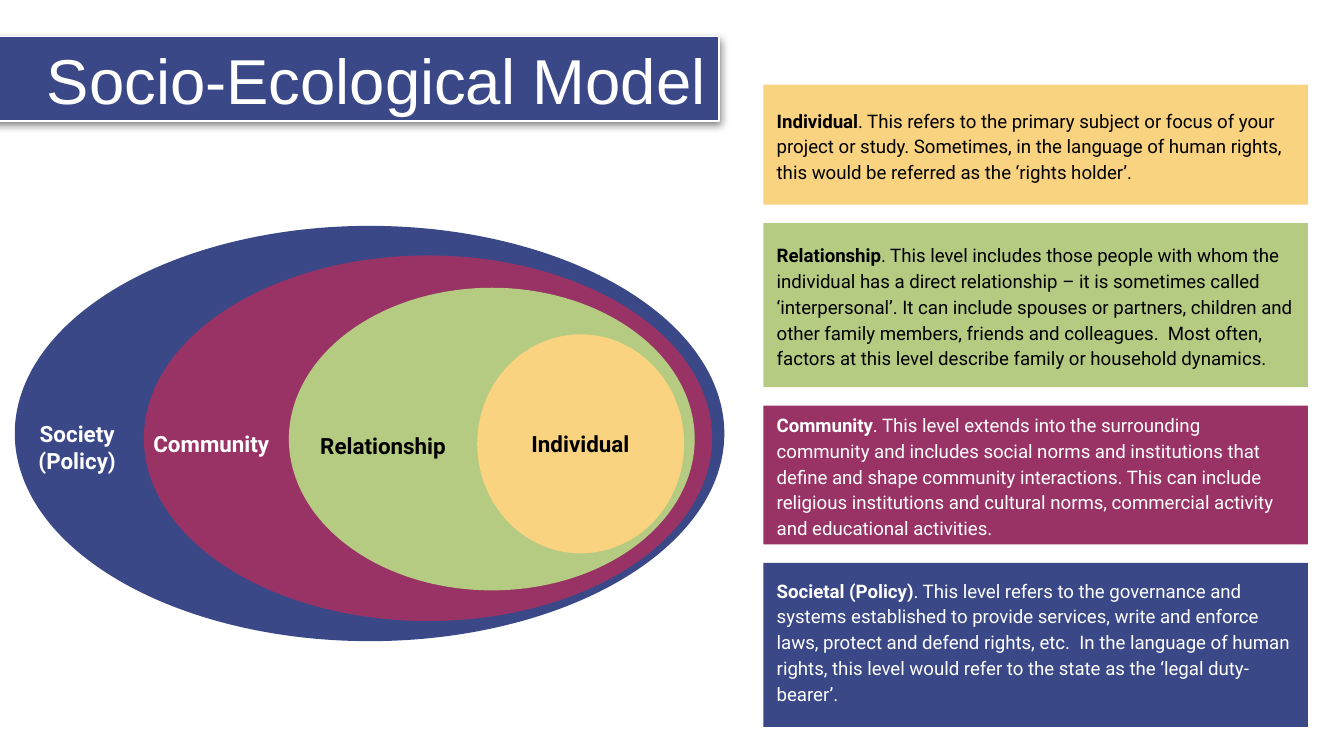
from lxml import etree
from pptx import Presentation
from pptx.dml.color import RGBColor
from pptx.enum.shapes import MSO_SHAPE as Preset
from pptx.enum.text import MSO_ANCHOR as Anchor, MSO_AUTO_SIZE as AutoSize, PP_ALIGN as Align
from pptx.oxml.ns import nsdecls
from pptx.util import Cm, Pt

NAVY = RGBColor(0x3A, 0x48, 0x88)
PLUM = RGBColor(0x99, 0x33, 0x65)
GREEN = RGBColor(0xB5, 0xCB, 0x82)
SAND = RGBColor(0xF9, 0xD3, 0x80)
WHITE = RGBColor(0xFF, 0xFF, 0xFF)
BLACK = RGBColor(0x00, 0x00, 0x00)

CARD_LEFT, CARD_TOP, CARD_WIDTH, CARD_GAP = 14.43, 1.6, 10.29, 0.35

# Level name, ellipse box, ellipse colour, label box, label colour
LEVELS = [
    ("Society (Policy)", (0.28, 4.27, 13.41, 7.85), NAVY, (0, 7.67, 2.92, 1.55), WHITE),
    ("Community", (2.72, 4.83, 10.74, 6.91), PLUM, (1.91, 7.77, 4.17, 1.22), WHITE),
    ("Relationship", (5.46, 5.44, 7.67, 5.72), GREEN, (5.36, 7.77, 3.76, 1.3), BLACK),
    ("Individual", (9.02, 6.32, 3.91, 4.14), SAND, (9.37, 7.54, 3.2, 1.7), BLACK),
]

# Term, definition, height, fill, text colour, space around the paragraph, anchor
CARDS = [
    ("Individual",
     ". This refers to the primary subject or focus of your project or study. "
     "Sometimes, in the language of human rights, this would be referred as the "
     "‘rights holder’.",
     2.27, SAND, BLACK, 12, Anchor.MIDDLE),
    ("Relationship",
     ". This level includes those people with whom the individual has a direct "
     "relationship – it is sometimes called ‘interpersonal’. It can include spouses "
     "or partners, children and other family members, friends and colleagues.  Most "
     "often, factors at this level describe family or household dynamics.",
     3.1, GREEN, BLACK, 0, Anchor.MIDDLE),
    ("Community",
     ". This level extends into the surrounding community and includes social norms "
     "and institutions that define and shape community interactions. This can include "
     "religious institutions and cultural norms, commercial activity and educational "
     "activities.",
     2.62, PLUM, WHITE, 12, Anchor.MIDDLE),
    ("Societal (Policy)",
     ". This level refers to the governance and systems established to provide "
     "services, write and enforce laws, protect and defend rights, etc.  In the "
     "language of human rights, this level would refer to the state as the ‘legal "
     "duty-bearer’.",
     3.1, NAVY, WHITE, 0, Anchor.TOP),
]


def set_frame(frame, anchor=Anchor.MIDDLE):
    frame.word_wrap = True
    frame.auto_size = AutoSize.NONE
    frame.vertical_anchor = anchor
    frame.margin_left = frame.margin_right = Cm(0.25)
    frame.margin_top = frame.margin_bottom = Cm(0.25)


def set_font(font, name, size, color):
    font.name = name
    font.size = Pt(size)
    font.color.rgb = color


def add_filled(shapes, preset, box, fill):
    shape = shapes.add_shape(preset, *map(Cm, box))
    shape.shadow.inherit = False
    shape.fill.solid()
    shape.fill.fore_color.rgb = fill
    shape.line.fill.background()
    return shape


def add_title(slide):
    title = slide.shapes.title
    title.left, title.top, title.width, title.height = map(Cm, (-0.23, 0.69, 13.82, 1.6))
    title.fill.solid()
    title.fill.fore_color.rgb = NAVY
    title.line.color.rgb = WHITE
    title.line.width = Pt(0.75)
    # Soft shadow straight below the banner
    title.element.spPr.append(etree.fromstring(
        f'<a:effectLst {nsdecls("a")}>'
        f'<a:outerShdw blurRad="{Pt(4.5)}" dist="{Pt(1.5)}" dir="5400000" rotWithShape="0">'
        '<a:srgbClr val="000000"><a:alpha val="48000"/></a:srgbClr>'
        '</a:outerShdw></a:effectLst>'))
    set_frame(title.text_frame)
    heading = title.text_frame.paragraphs[0]
    heading.text = "Socio-Ecological Model"
    heading.alignment = Align.RIGHT
    set_font(heading.font, "Arial", 34, WHITE)


def add_level(shapes, name, ellipse_box, fill, label_box, color):
    add_filled(shapes, Preset.OVAL, ellipse_box, fill)
    label = shapes.add_textbox(*map(Cm, label_box))
    set_frame(label.text_frame)
    caption = label.text_frame.paragraphs[0]
    caption.text = name
    caption.alignment = Align.CENTER
    set_font(caption.font, "Roboto", 12, color)
    caption.font.bold = True


def add_card(shapes, top, term, definition, height, fill, color, space, anchor):
    card = add_filled(shapes, Preset.RECTANGLE, (CARD_LEFT, top, CARD_WIDTH, height), fill)
    set_frame(card.text_frame, anchor)
    entry = card.text_frame.paragraphs[0]
    entry.alignment = Align.LEFT
    entry.line_spacing = 1.15
    entry.space_before = entry.space_after = Pt(space)
    set_font(entry.font, "Roboto", 10, color)
    for text, bold in ((term, True), (definition, False)):
        run = entry.add_run()
        run.text = text
        run.font.bold = bold


def main():
    deck = Presentation()
    deck.slide_width, deck.slide_height = Cm(25.4), Cm(14.29)
    slide = deck.slides.add_slide(deck.slide_layouts[5])

    add_title(slide)

    # Nested ellipses, outermost first
    model = slide.shapes.add_group_shape()
    for level in LEVELS:
        add_level(model.shapes, *level)

    # Definition cards, stacked with equal gaps
    top = CARD_TOP
    for card in CARDS:
        add_card(slide.shapes, top, *card)
        top += card[2] + CARD_GAP

    deck.save("out.pptx")


if __name__ == "__main__":
    main()
